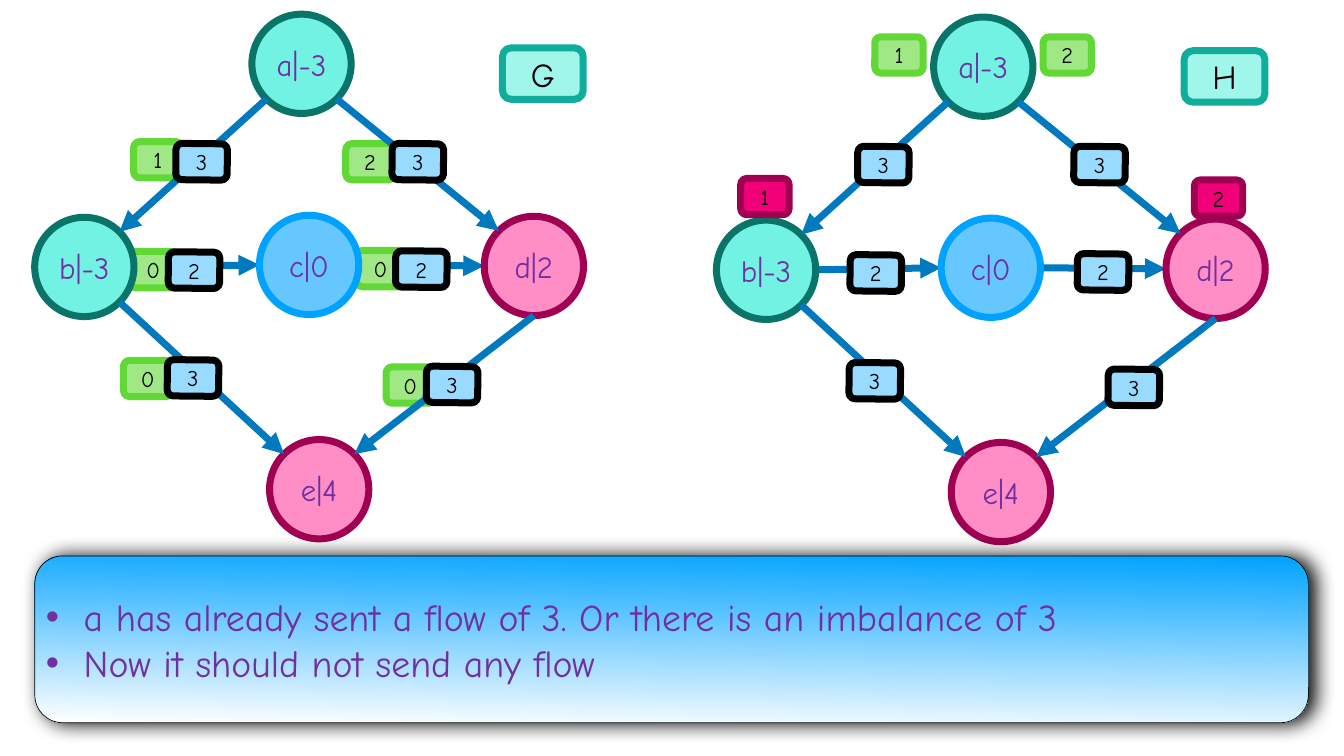
from dataclasses import dataclass
from math import cos, radians, sin
from typing import NamedTuple

from lxml import etree
from pptx import Presentation
from pptx import util as u
from pptx.dml.color import RGBColor
from pptx.enum import shapes, text
from pptx.oxml import ns

WIDTH, HEIGHT = u.Inches(26.67), u.Inches(15)
COL, ROW = WIDTH / 80, HEIGHT / 45
FONT = "Comic Neue"
PURPLE, BLACK, BLUE = "7030A0", "000000", "0079BF"
DIAMETER = 5.91
ROUND, OVAL = shapes.MSO_SHAPE.ROUNDED_RECTANGLE, shapes.MSO_SHAPE.OVAL


class Point(NamedTuple):
    col: float
    row: float

    def plus(self, col: float, row: float) -> "Point":
        return Point(self.col + col, self.row + row)


class Style(NamedTuple):
    preset: shapes.MSO_SHAPE
    cols: float
    rows: float
    fill: str
    line: str
    size: int
    ink: str = BLACK
    rotation: float = 0


@dataclass
class Node:
    label: str
    center: Point
    style: Style


@dataclass
class Edge:
    start: str
    start_angle: int
    end: str
    end_angle: int
    capacity: str
    capacity_at: Point
    flow: str
    flow_at: Point


class Mark(NamedTuple):
    label: str
    center: Point
    style: Style


SUPPLY = Style(OVAL, DIAMETER, DIAMETER, "72F2E3", "0B7468", 44, PURPLE)
TRANSIT = SUPPLY._replace(fill="66C7FF", line="00A2FF")
DEMAND = SUPPLY._replace(fill="FF8EC7", line="A00051")
FLOW = Style(ROUND, 2.88, 2.16, "A0E886", "61D836", 32)
EXCESS = FLOW._replace(fill="F10079", line="A00051")
CAPACITY = Style(ROUND, 3.06, 2.16, "99DAFF", BLACK, 32, rotation=0.6)
TITLE = Style(ROUND, 4.8, 3.06, "A1F6EC", "10AD9B", 48)

NODES = {
    "b": Node("b|-3", Point(5.02, 15.89), SUPPLY),
    "a": Node("a|-3", Point(17.95, 3.8), SUPPLY),
    "c": Node("c|0", Point(18.4, 15.77), TRANSIT),
    "e": Node("e|4", Point(19, 29.12), DEMAND),
    "d": Node("d|2", Point(31.78, 15.83), DEMAND),
}
ACROSS = [
    Edge("b", 0, "c", 180, "2", Point(11.55, 16.08), "0", Point(9.12, 16.05)),
    Edge("c", 0, "d", 180, "2", Point(25.08, 16.02), "0", Point(22.65, 15.99)),
]
DIAGONAL = [
    Edge("a", 225, "b", 45, "3", Point(12, 9.63), "1", Point(9.39, 9.51)),
    Edge("b", 315, "e", 135, "3", Point(11.49, 22.5), "0", Point(8.79, 22.53)),
    Edge("d", 270, "e", 45, "3", Point(26.91, 22.89), "0", Point(24.42, 22.92)),
    Edge("a", 315, "d", 135, "3", Point(24.87, 9.63), "2", Point(22.02, 9.63)),
]
EDGES = ACROSS + DIAGONAL
G_FLOWS = [Mark(edge.flow, edge.flow_at, FLOW) for edge in EDGES]
H_MARKS = [
    Mark("1", Point(12.93, 3.1), FLOW),
    Mark("2", Point(22.95, 3.1), FLOW),
    Mark("1", Point(4.95, 11.53), EXCESS),
    Mark("2", Point(31.95, 11.62), EXCESS),
]
LESSONS = [
    "a has already sent a flow of 3. Or there is an imbalance of 3",
    "Now it should not send any flow",
]


def rgb(value: str) -> RGBColor:
    """Return the colour of a hex string."""
    return RGBColor.from_string(value)


def add_run(paragraph, words: str, size: int, ink: str) -> None:
    """Add one run of text to a paragraph."""
    run = paragraph.add_run()
    run.text = words
    run.font.name, run.font.size = FONT, u.Pt(size)
    run.font.color.rgb = rgb(ink)


def add_frame(slide, preset, left: float, top: float, cols: float, rows: float):
    """Add a shape placed on the grid, with even text margins."""
    shape = slide.shapes.add_shape(
        preset, round(left * COL), round(top * ROW), round(cols * COL), round(rows * ROW))
    frame = shape.text_frame
    frame.word_wrap = True
    frame.vertical_anchor = text.MSO_ANCHOR.MIDDLE
    frame.margin_left = frame.margin_right = u.Inches(0.06)
    frame.margin_top = frame.margin_bottom = u.Inches(0.06)
    return shape


def add_mark(slide, label: str, center: Point, style: Style) -> None:
    """Draw a labelled shape around its centre."""
    corner = center.plus(-style.cols / 2, -style.rows / 2)
    shape = add_frame(slide, style.preset, *corner, style.cols, style.rows)
    shape.shadow.inherit = False
    shape.rotation = style.rotation
    shape.fill.solid()
    shape.fill.fore_color.rgb = rgb(style.fill)
    shape.line.color.rgb = rgb(style.line)
    shape.line.width = u.Pt(10)
    paragraph = shape.text_frame.paragraphs[0]
    paragraph.alignment = text.PP_ALIGN.CENTER
    add_run(paragraph, label, style.size, style.ink)


def rim(name: str, angle: int) -> Point:
    """Return the point of a node's rim at an angle in degrees."""
    turn = radians(angle)
    return NODES[name].center.plus(DIAMETER / 2 * cos(turn), -DIAMETER / 2 * sin(turn))


def add_edge(slide, edge: Edge, shift: Point) -> None:
    """Draw the arrow between two nodes."""
    start = rim(edge.start, edge.start_angle).plus(*shift)
    end = rim(edge.end, edge.end_angle).plus(*shift)
    arrow = slide.shapes.add_connector(
        shapes.MSO_CONNECTOR.STRAIGHT, round(start.col * COL), round(start.row * ROW),
        round(end.col * COL), round(end.row * ROW))
    arrow.line.color.rgb = rgb(BLUE)
    arrow.line.width = u.Pt(10)
    etree.SubElement(arrow.line._get_or_add_ln(), ns.qn("a:tailEnd"), type="triangle")
    etree.SubElement(arrow._element.spPr, ns.qn("a:effectLst"))


def add_graph(slide, title: str, shift: Point, behind: list[Mark], front: list[Mark]) -> None:
    """Draw the network with marks behind and in front of it."""
    capacities = [Mark(edge.capacity, edge.capacity_at, CAPACITY) for edge in EDGES]
    heading = Mark(title, Point(32.31, 4.38), TITLE)
    nodes = [Mark(node.label, node.center, node.style) for node in NODES.values()]
    for edges, marks in ((ACROSS, behind + nodes), (DIAGONAL, capacities + [heading] + front)):
        for edge in edges:
            add_edge(slide, edge, shift)
        for mark in marks:
            add_mark(slide, mark.label, mark.center.plus(*shift), mark.style)


def add_lessons(slide) -> None:
    """Draw the shaded panel with its bulleted lines."""
    panel = add_frame(slide, ROUND, 2.07, 33.09, 75.81, 9.93)
    panel.fill.gradient()
    panel.fill.gradient_angle = 269
    for stop, shade in zip(panel.fill.gradient_stops, ("00A2FF", "FFFFFF")):
        stop.color.rgb = rgb(shade)
    panel.line.color.rgb = rgb(BLACK)
    panel.line.width = u.Pt(1)
    effects = etree.SubElement(panel._element.spPr, ns.qn("a:effectLst"))
    shadow = etree.SubElement(effects, ns.qn("a:outerShdw"), blurRad=str(u.Pt(28)),
                              dist=str(u.Pt(9)), dir="0", rotWithShape="0")
    tint = etree.SubElement(shadow, ns.qn("a:srgbClr"), val=BLACK)
    etree.SubElement(tint, ns.qn("a:alpha"), val="97000")
    frame = panel.text_frame
    for index, lesson in enumerate(LESSONS):
        paragraph = frame.add_paragraph() if index else frame.paragraphs[0]
        paragraph.alignment = text.PP_ALIGN.LEFT
        properties = paragraph._p.get_or_add_pPr()
        properties.set("marL", str(u.Inches(0.75)))
        properties.set("indent", str(u.Inches(-0.75)))
        etree.SubElement(properties, ns.qn("a:buFont"), typeface="Arial")
        etree.SubElement(properties, ns.qn("a:buChar"), char="•")
        add_run(paragraph, lesson, 54, PURPLE)


def main() -> None:
    """Build the slide and save it."""
    deck = Presentation()
    deck.slide_width, deck.slide_height = WIDTH, HEIGHT
    slide = deck.slides.add_slide(deck.slide_layouts[6])
    add_graph(slide, "G", Point(0, 0), G_FLOWS, [])
    add_graph(slide, "H", Point(40.58, 0.17), [], H_MARKS)
    add_lessons(slide)
    deck.save("out.pptx")


if __name__ == "__main__":
    main()
